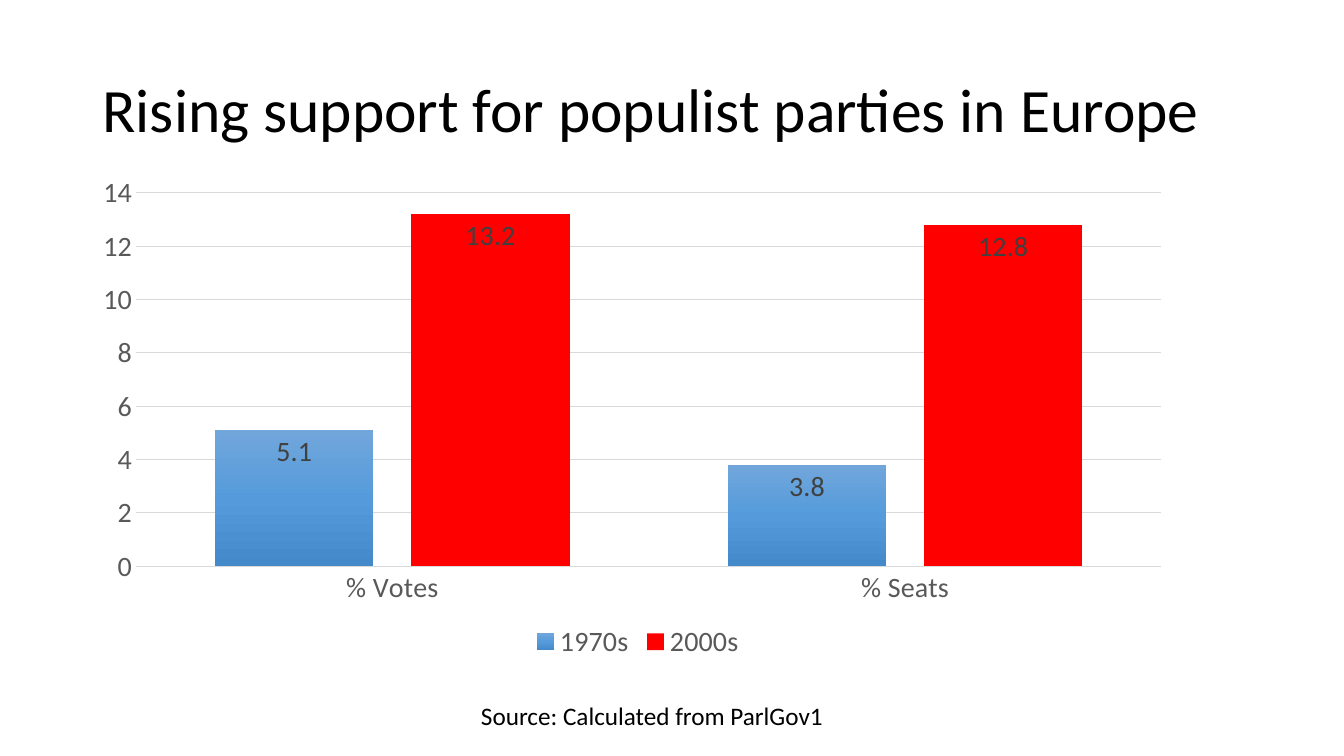
from lxml import etree
from pptx import Presentation
from pptx import util as u
from pptx.chart import data
from pptx.dml import color
from pptx.enum import chart as ch
from pptx.enum import text
from pptx.oxml import parse_xml
from pptx.oxml import ns

PX = 9525
FONT = "Calibri"
HEX = {
    "ink": "000000", "axis": "595959", "label": "404040", "grid": "D9D9D9",
    "red": "FF0000", "top": "71A6DB", "mid": "559BDB", "low": "448ACA",
}
CATS = ["% Votes", "% Seats"]
ROWS = {"1970s": (5.1, 3.8), "2000s": (13.2, 12.8)}
PLOT = {"x": 0.04, "y": 0.04, "w": 0.94, "h": 0.76}


def rgb(name):
    return color.RGBColor.from_string(HEX[name])


def put(item, **vals):
    for key, val in vals.items():
        setattr(item, key, val)


def style(font, size, name):
    put(font, name=FONT, size=u.Pt(size), bold=False)
    font.color.rgb = rgb(name)


def place(shape, box):
    left, top, width, height = (n * PX for n in box)
    put(shape, left=left, top=top, width=width, height=height)


def write(shape, words, size, align, anchor):
    frame = shape.text_frame
    put(frame, word_wrap=True, vertical_anchor=anchor,
        auto_size=text.MSO_AUTO_SIZE.NONE)
    para = frame.paragraphs[0]
    para.alignment = align
    run = para.add_run()
    run.text = words
    style(run.font, size, "ink")
    return para


def head(slide, box):
    title = slide.shapes.title
    place(title, box)
    para = write(title, "Rising support for populist parties in Europe", 44,
                 text.PP_ALIGN.LEFT, text.MSO_ANCHOR.MIDDLE)
    para.line_spacing = 0.9


def source(slide, box):
    note = slide.shapes.add_textbox(*(n * PX for n in box))
    write(note, "Source: Calculated from ParlGov1", 18,
          text.PP_ALIGN.CENTER, text.MSO_ANCHOR.TOP)


def shade(series, names):
    stops = "".join(
        f'<a:gs pos="{i * 50000}"><a:srgbClr val="{HEX[name]}"/></a:gs>'
        for i, name in enumerate(names))
    series._element.get_or_add_spPr().append(parse_xml(
        f'<a:gradFill {ns.nsdecls("a")} rotWithShape="1"><a:gsLst>{stops}'
        '</a:gsLst><a:lin ang="5400000" scaled="0"/></a:gradFill>'))


def fix_plot(graph):
    area = graph._chartSpace.chart.plotArea
    for old in area.findall(ns.qn("c:layout")):
        area.remove(old)
    layout = etree.Element(ns.qn("c:layout"))
    manual = etree.SubElement(layout, ns.qn("c:manualLayout"))
    marks = {"layoutTarget": "inner", "xMode": "edge", "yMode": "edge", **PLOT}
    for tag, val in marks.items():
        etree.SubElement(manual, ns.qn(f"c:{tag}")).set("val", str(val))
    area.insert(0, layout)


def axes(graph):
    for axis in (graph.category_axis, graph.value_axis):
        put(axis, major_tick_mark=ch.XL_TICK_MARK.NONE,
            minor_tick_mark=ch.XL_TICK_MARK.NONE)
        style(axis.tick_labels.font, 20, "axis")
    base = graph.category_axis.format.line
    grid = graph.value_axis.major_gridlines.format.line
    for line, width in ((base, 1), (grid, 0.75)):
        line.color.rgb = rgb("grid")
        line.width = u.Pt(width)
    put(graph.value_axis, minimum_scale=0, maximum_scale=14, major_unit=2)
    graph.value_axis.format.line.fill.background()


def bars(slide, box):
    table = data.CategoryChartData()
    table.categories = CATS
    for name, vals in ROWS.items():
        table.add_series(name, vals)
    graph = slide.shapes.add_chart(
        ch.XL_CHART_TYPE.COLUMN_CLUSTERED, *(n * PX for n in box), table).chart
    style(graph.font, 20, "ink")
    put(graph, has_title=False, has_legend=True)
    put(graph.legend, position=ch.XL_LEGEND_POSITION.BOTTOM,
        include_in_layout=False)
    style(graph.legend.font, 20, "axis")
    axes(graph)
    plot = graph.plots[0]
    put(plot, gap_width=100, overlap=-24, vary_by_categories=False)
    old, new = plot.series
    shade(old, ("top", "mid", "low"))
    new.format.fill.solid()
    new.format.fill.fore_color.rgb = rgb("red")
    for series in plot.series:
        series.invert_if_negative = False
        labels = series.data_labels
        put(labels, show_value=True,
            position=ch.XL_LABEL_POSITION.INSIDE_END)
        style(labels.font, 20, "label")
    fix_plot(graph)


def main():
    deck = Presentation()
    put(deck, slide_width=1280 * PX, slide_height=720 * PX)
    slide = deck.slides.add_slide(deck.slide_layouts[5])
    head(slide, (88, 38, 1104, 139))
    source(slide, (115, 662, 1012, 38))
    bars(slide, (88, 165, 1039, 468))
    deck.save("out.pptx")


if __name__ == "__main__":
    main()
